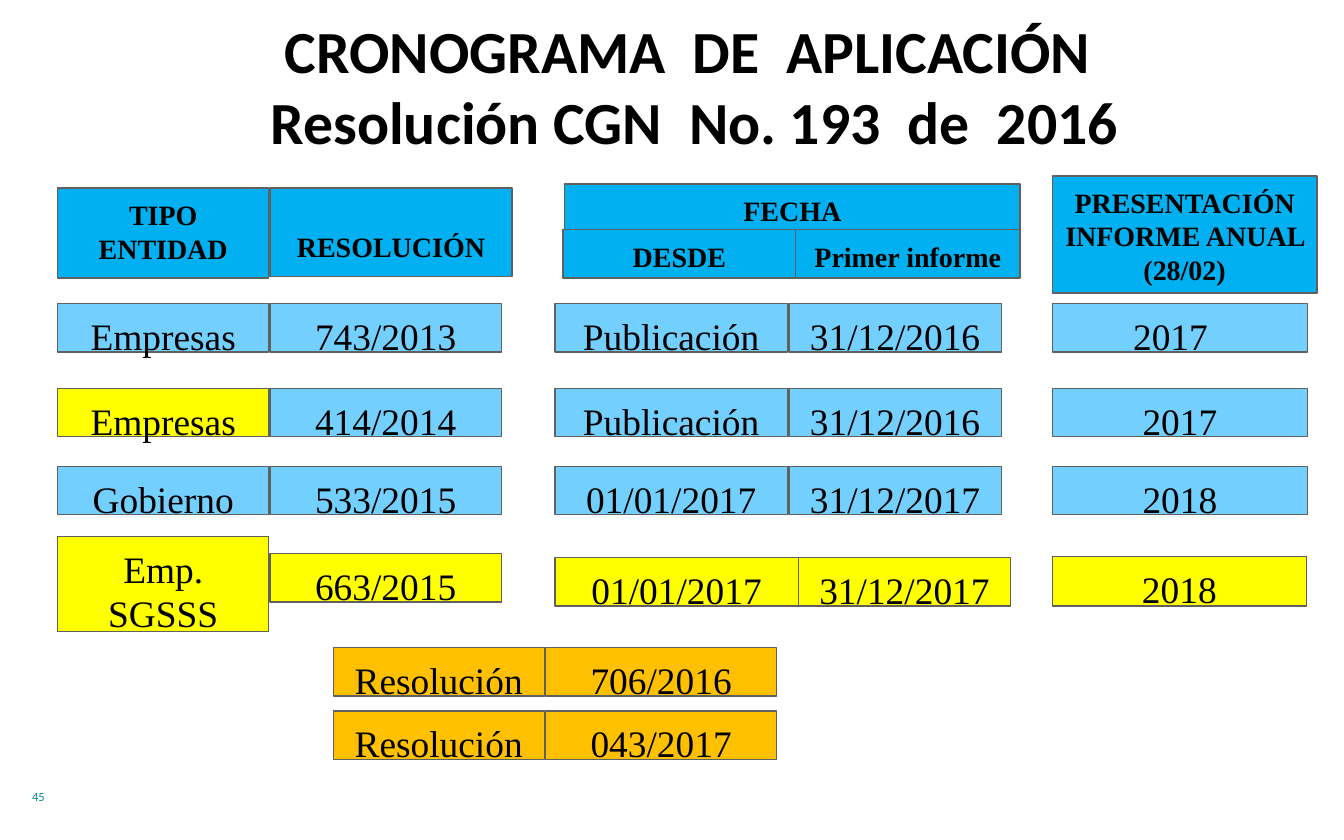
from pptx import Presentation
from pptx.dml.color import RGBColor
from pptx.enum.shapes import MSO_SHAPE as Shape
from pptx.enum.text import MSO_ANCHOR as Anchor, PP_ALIGN as Align
from pptx.util import Emu, Pt

SCALE = 9144  # EMU per px, 100 px to the inch
BLACK, GREY, TEAL = "000000", "606060", "00918E"
BLUE, SKY, YELLOW, ORANGE = "00B0F0", "72CFFE", "FFFF00", "FFC000"
SERIF, SANS = "Times New Roman", "Calibri"
ROW_HEIGHT = 36
TYPE_X, RESOLUTION_X, FROM_X, REPORT_X, ANNUAL_X = 43, 201, 413, 587, 783
TYPE_W, RESOLUTION_W, FROM_W, REPORT_W, ANNUAL_W = 157, 172, 173, 158, 190


def px(length):
    return Emu(length * SCALE)


def color(value):
    return RGBColor.from_string(value)


def format_text(shape, text, size, font, ink=BLACK, bold=False, align=Align.CENTER,
                insets=(8, 4, 8, 4)):
    frame = shape.text_frame
    frame.word_wrap = True
    frame.vertical_anchor = Anchor.TOP
    (frame.margin_left, frame.margin_top,
     frame.margin_right, frame.margin_bottom) = map(px, insets)
    frame.text = text
    for paragraph in frame.paragraphs:
        paragraph.alignment = align
        paragraph.font.size = Pt(size)
        paragraph.font.name = font
        paragraph.font.bold = bold
        paragraph.font.color.rgb = color(ink)


def add_cell(slide, box, text, fill, size=20, bold=False, top_inset=7, right_inset=8):
    cell = slide.shapes.add_shape(Shape.RECTANGLE, *map(px, box))
    cell.shadow.inherit = False
    cell.fill.solid()
    cell.fill.fore_color.rgb = color(fill)
    cell.line.color.rgb = color(GREY)
    cell.line.width = Pt(0.75)
    format_text(cell, text, size, SERIF, bold=bold, insets=(8, top_inset, right_inset, 4))


def add_title(slide, box):
    title = slide.shapes.title
    title.left, title.top, title.width, title.height = map(px, box)
    format_text(title, "CRONOGRAMA  DE  APLICACIÓN \vResolución CGN  No. 193  de  2016",
                32, SANS, bold=True, insets=(8, 5, 8, 4))


def add_page_number(slide, box):
    number = slide.shapes.add_textbox(*map(px, box))
    format_text(number, "45", 6.7, SANS, TEAL, align=Align.LEFT, insets=(10, 5, 10, 5))


def add_entity_header(slide, left, top):
    add_cell(slide, (left, top, TYPE_W, 67), "TIPO\nENTIDAD", BLUE, 15, True)
    add_cell(slide, (left + 158, top, 180, 66), "RESOLUCIÓN", BLUE, 15, True, top_inset=31)


def add_date_header(slide, left, top):
    add_cell(slide, (left + 1, top, 339, 34), "FECHA", BLUE, 15, True)
    add_cell(slide, (left, top + 34, 173, ROW_HEIGHT), "DESDE", BLUE, 15, True)
    add_cell(slide, (left + 173, top + 34, 167, ROW_HEIGHT), "Primer informe", BLUE, 15, True)


def add_annual_header(slide, box):
    add_cell(slide, box, "PRESENTACIÓN INFORME ANUAL (28/02)", BLUE, 15, True)


def add_schedule_row(slide, top, entries, fill, type_fill):
    entity, resolution, start, report, annual = entries
    add_cell(slide, (TYPE_X, top, TYPE_W, ROW_HEIGHT), entity, type_fill)
    add_cell(slide, (RESOLUTION_X, top, RESOLUTION_W, ROW_HEIGHT), resolution, fill)
    add_cell(slide, (FROM_X, top, FROM_W, ROW_HEIGHT), start, fill)
    add_cell(slide, (REPORT_X, top, REPORT_W, ROW_HEIGHT), report, fill)
    # The first year sits a little left of its cell's centre
    add_cell(slide, (ANNUAL_X, top, ANNUAL_W, ROW_HEIGHT), annual, fill,
             right_inset=22 if top == 226 else 8)


def add_health_row(slide, top):
    """Last schedule row, whose cells are staggered."""
    add_cell(slide, (TYPE_X, top, TYPE_W, 71), "Emp. SGSSS", YELLOW)
    add_cell(slide, (RESOLUTION_X, top + 13, RESOLUTION_W, ROW_HEIGHT), "663/2015", YELLOW)
    add_cell(slide, (FROM_X, top + 16, 181, ROW_HEIGHT), "01/01/2017", YELLOW)
    add_cell(slide, (FROM_X + 181, top + 16, REPORT_W, ROW_HEIGHT), "31/12/2017", YELLOW)
    add_cell(slide, (ANNUAL_X, top + 15, 189, 37), "2018", YELLOW)


def add_amendments(slide, left, top):
    for index, number in enumerate(("706/2016", "043/2017")):
        y = top + 47 * index
        add_cell(slide, (left, y, TYPE_W, ROW_HEIGHT), "Resolución", ORANGE)
        add_cell(slide, (left + 158, y, RESOLUTION_W, ROW_HEIGHT), number, ORANGE)


SCHEDULE = [
    (226, ("Empresas", "743/2013", "Publicación", "31/12/2016", "2017"), SKY),
    (289, ("Empresas", "414/2014", "Publicación", "31/12/2016", "2017"), YELLOW),
    (347, ("Gobierno", "533/2015", "01/01/2017", "31/12/2017", "2018"), SKY),
]


def main():
    deck = Presentation()
    deck.slide_width, deck.slide_height = px(1000), px(625)
    slide = deck.slides.add_slide(deck.slide_layouts[5])
    add_title(slide, (100, 5, 834, 110))
    add_entity_header(slide, TYPE_X, 140)
    add_date_header(slide, 419, 137)
    add_annual_header(slide, (ANNUAL_X, 131, 197, 87))
    for top, entries, type_fill in SCHEDULE:
        add_schedule_row(slide, top, entries, SKY, type_fill)
    add_health_row(slide, 399)
    add_amendments(slide, 248, 482)
    add_page_number(slide, (14, 582, 208, 30))
    deck.save("out.pptx")


if __name__ == "__main__":
    main()
